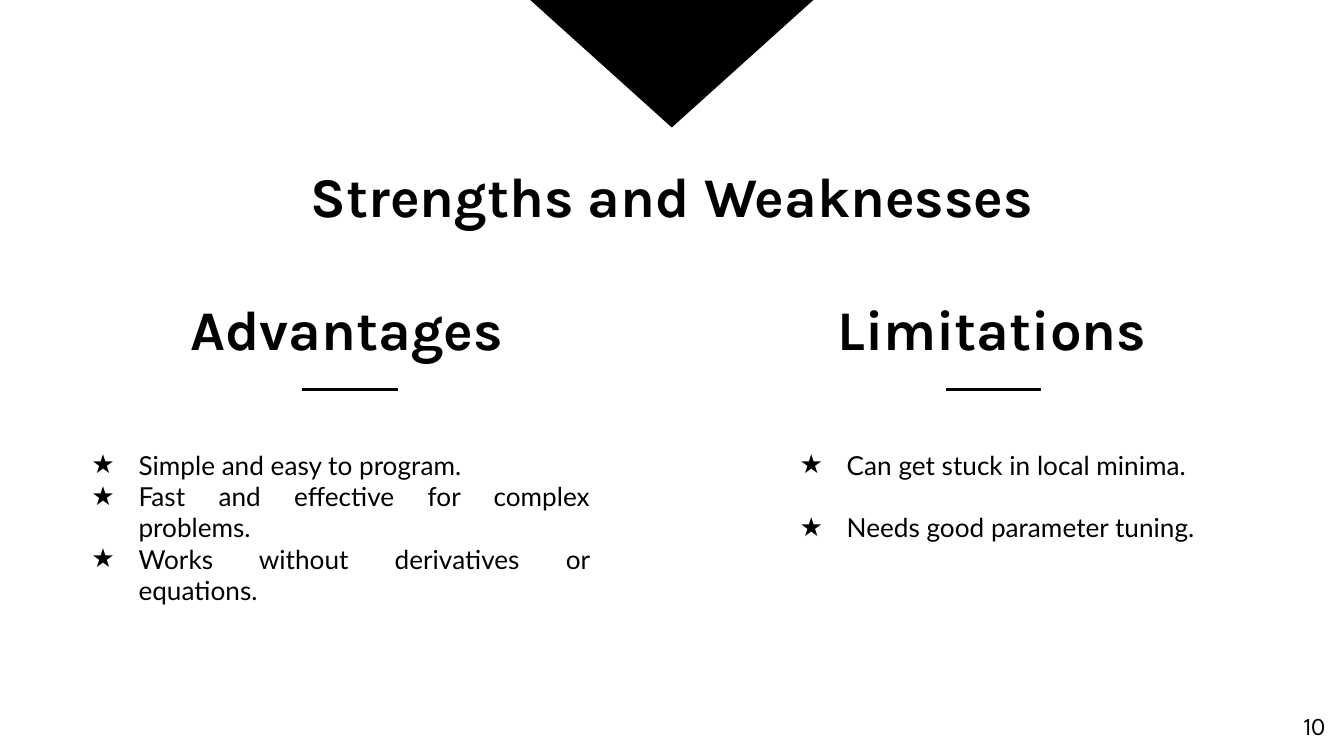
from dataclasses import dataclass

from pptx import Presentation
from pptx.dml.color import RGBColor
from pptx.enum.shapes import MSO_CONNECTOR, MSO_SHAPE
from pptx.enum.text import MSO_ANCHOR, MSO_AUTO_SIZE, PP_ALIGN
from pptx.oxml.ns import qn
from pptx.oxml.xmlchemy import OxmlElement
from pptx.shapes.base import BaseShape
from pptx.slide import Slide
from pptx.text.text import TextFrame, _Paragraph
from pptx.util import Pt

LEFT, CENTER, RIGHT = PP_ALIGN.LEFT, PP_ALIGN.CENTER, PP_ALIGN.RIGHT
JUSTIFY = PP_ALIGN.JUSTIFY
TOP, MIDDLE = MSO_ANCHOR.TOP, MSO_ANCHOR.MIDDLE
NO_FIT = MSO_AUTO_SIZE.NONE
STRAIGHT = MSO_CONNECTOR.STRAIGHT
TRIANGLE = MSO_SHAPE.ISOSCELES_TRIANGLE
COMPARE = 4  # layout with a title and two headed lists


@dataclass(frozen=True)
class Font:
    name: str
    size: float
    bold: bool = False


@dataclass(frozen=True)
class Theme:
    ink: RGBColor = RGBColor(0, 0, 0)
    paper: RGBColor = RGBColor(255, 255, 255)
    head: Font = Font("Karla", 30, True)
    body: Font = Font("Lato", 14)
    number: Font = Font("League Spartan", 13)


@dataclass(frozen=True)
class Box:
    left: float
    top: float
    width: float
    height: float


@dataclass(frozen=True)
class Column:
    head: str
    head_left: float
    rule_left: float
    list_left: float
    list_width: float
    items: tuple[str, ...]
    gap: float
    head_slot: int
    list_slot: int


THEME = Theme()
COLUMNS = (
    Column("Advantages", 74.9, 162, 31, 292.3,
           ("Simple and easy to program.",
            "Fast and effective for complex problems.",
            "Works without derivatives or equations."), 0, 1, 2),
    Column("Limitations", 420.5, 506.9, 410.4, 244.1,
           ("Can get stuck in local minima.",
            "Needs good parameter tuning."), 16.8, 3, 4),
)


def place(shape: BaseShape, box: Box) -> None:
    shape.left, shape.top = Pt(box.left), Pt(box.top)
    shape.width, shape.height = Pt(box.width), Pt(box.height)


def set_frame(frame: TextFrame, anchor: MSO_ANCHOR) -> None:
    frame.auto_size = NO_FIT
    frame.word_wrap = True
    frame.vertical_anchor = anchor
    frame.margin_left = frame.margin_right = Pt(7.2)
    frame.margin_top = frame.margin_bottom = Pt(7.2)


def write(para: _Paragraph, text: str, font: Font, align: PP_ALIGN,
          before: float = 0) -> None:
    para.alignment = align
    para.line_spacing = 1.0
    para.space_before, para.space_after = Pt(before), Pt(0)
    run = para.add_run()
    run.text = text
    run.font.name, run.font.size = font.name, Pt(font.size)
    run.font.bold = font.bold
    run.font.color.rgb = THEME.ink


def add_star(para: _Paragraph) -> None:
    """Give the paragraph a hanging star bullet."""
    props = para._p.get_or_add_pPr()
    props.set("marL", str(Pt(36)))
    props.set("indent", str(Pt(-25.2)))
    tint = OxmlElement("a:buClr")
    color = OxmlElement("a:srgbClr")
    color.set("val", str(THEME.ink))
    tint.append(color)
    mark = OxmlElement("a:buChar")
    mark.set("char", "★")
    props.extend((tint, mark))


def draw_text(shape: BaseShape, box: Box, text: str, font: Font,
              align: PP_ALIGN, anchor: MSO_ANCHOR = TOP) -> None:
    place(shape, box)
    set_frame(shape.text_frame, anchor)
    write(shape.text_frame.paragraphs[0], text, font, align)


def draw_list(shape: BaseShape, box: Box, items: tuple[str, ...],
              gap: float) -> None:
    place(shape, box)
    frame = shape.text_frame
    set_frame(frame, TOP)
    for i, item in enumerate(items):
        para = frame.add_paragraph() if i else frame.paragraphs[0]
        write(para, item, THEME.body, JUSTIFY, gap if i else 0)
        add_star(para)


def draw_rule(slide: Slide, left: float) -> None:
    top = Pt(208.6)
    rule = slide.shapes.add_connector(
        STRAIGHT, Pt(left), top, Pt(left + 51), top)
    rule.line.color.rgb = THEME.ink
    rule.line.width = Pt(1.5)
    rule._element.find(qn("p:spPr")).append(OxmlElement("a:effectLst"))


def draw_column(slide: Slide, col: Column) -> None:
    slots = {p.placeholder_format.idx: p for p in slide.placeholders}
    draw_text(slots[col.head_slot], Box(col.head_left, 163.4, 221.8, 24.5),
              col.head, THEME.head, CENTER, MIDDLE)
    draw_list(slots[col.list_slot],
              Box(col.list_left, 233.3, col.list_width, 77.8),
              col.items, col.gap)
    draw_rule(slide, col.rule_left)


def draw_wedge(slide: Slide) -> None:
    wedge = slide.shapes.add_shape(
        TRIANGLE, Pt(282.4), Pt(-1.5), Pt(155), Pt(69.8))
    wedge.rotation = 180
    wedge.shadow.inherit = False
    wedge.fill.solid()
    wedge.fill.fore_color.rgb = THEME.ink
    wedge.line.fill.background()


def main() -> None:
    deck = Presentation()
    deck.slide_width, deck.slide_height = Pt(720), Pt(405)
    slide = deck.slides.add_slide(deck.slide_layouts[COMPARE])
    slide.background.fill.solid()
    slide.background.fill.fore_color.rgb = THEME.paper
    draw_wedge(slide)
    draw_text(slide.shapes.title, Box(123.1, 79.2, 473.8, 77.8),
              "Strengths and Weaknesses", THEME.head, CENTER)
    for col in COLUMNS:
        draw_column(slide, col)
    page = Box(673.9, 373.7, 43.2, 31)
    draw_text(slide.shapes.add_textbox(0, 0, 0, 0), page, "10",
              THEME.number, RIGHT)
    deck.save("out.pptx")


if __name__ == "__main__":
    main()
